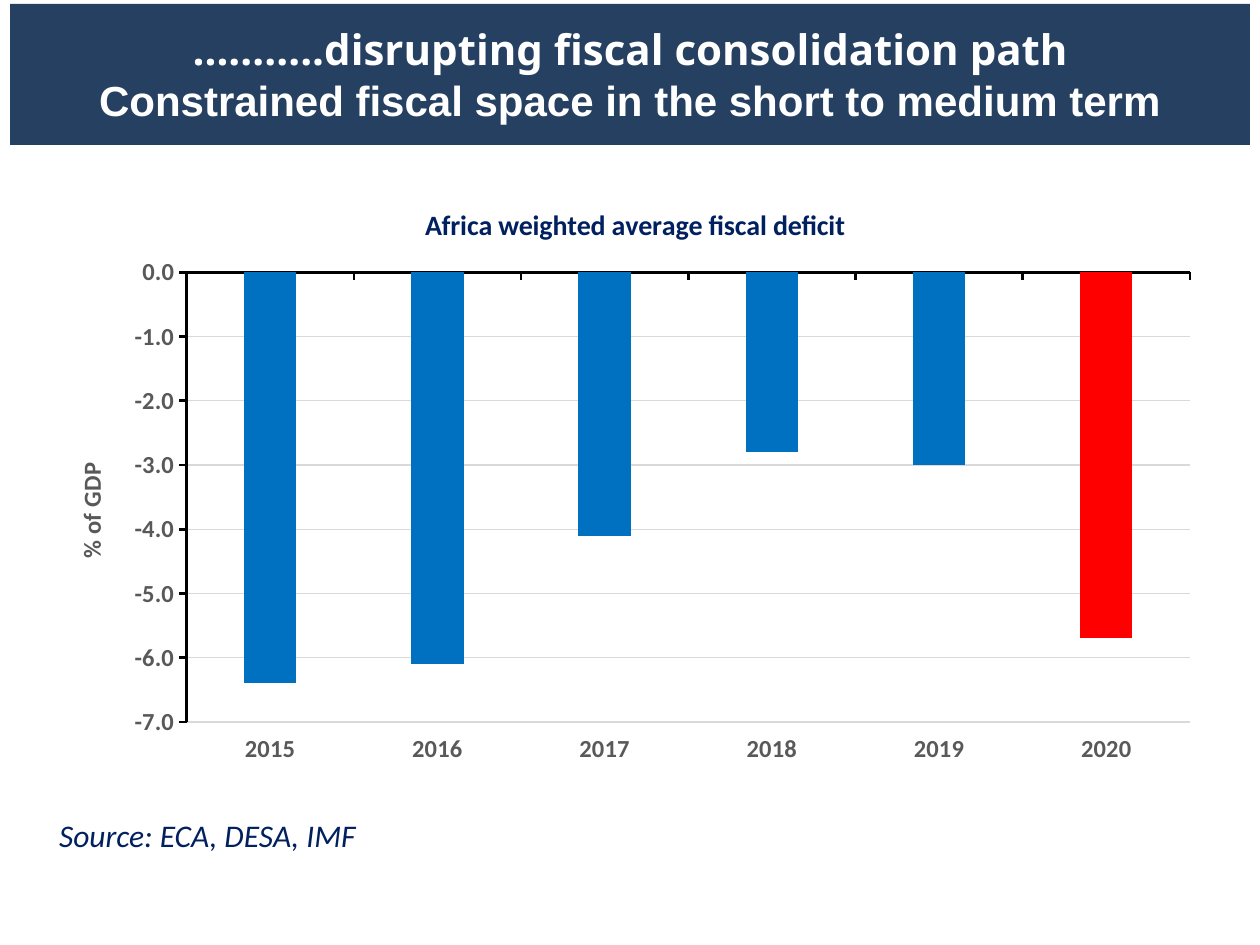
from lxml import etree
from pptx import Presentation
from pptx.chart.data import CategoryChartData
from pptx.dml.color import RGBColor
from pptx.enum.chart import XL_CHART_TYPE, XL_TICK_LABEL_POSITION, XL_TICK_MARK
from pptx.enum.text import MSO_ANCHOR, PP_ALIGN
from pptx.oxml.ns import qn
from pptx.util import Inches, Pt

COLUMN = XL_CHART_TYPE.COLUMN_CLUSTERED
LOW = XL_TICK_LABEL_POSITION.LOW
OUT, NO_TICK = XL_TICK_MARK.OUTSIDE, XL_TICK_MARK.NONE
MIDDLE, CENTER = MSO_ANCHOR.MIDDLE, PP_ALIGN.CENTER

COLORS = {"banner": "254061", "white": "FFFFFF", "navy": "002060",
          "black": "000000", "gray": "595959", "grid": "D9D9D9",
          "bar": "0070C0", "crisis": "FF0000"}
DEFICIT = {"2015": -6.4, "2016": -6.1, "2017": -4.1,
           "2018": -2.8, "2019": -3.0, "2020": -5.7}


def rgb(name):
    return RGBColor.from_string(COLORS[name])


def place(parent, index, **parts):
    """Give a chart part a manual layout, in fractions of the chart."""
    for old in parent.findall(qn("c:layout")):
        parent.remove(old)
    layout = etree.Element(qn("c:layout"))
    manual = etree.SubElement(layout, qn("c:manualLayout"))
    for tag, value in parts.items():
        etree.SubElement(manual, qn(f"c:{tag}")).set("val", str(value))
    parent.insert(index, layout)


class Deck:
    def __init__(self):
        self.prs = Presentation()
        self.prs.slide_width, self.prs.slide_height = Inches(10), Inches(7.5)
        self.slide = self.prs.slides.add_slide(self.prs.slide_layouts[5])

    def style(self, font, size, color, face="Calibri", bold=False, italic=False):
        font.name, font.size = face, Pt(size)
        font.bold, font.italic = bold, italic
        font.color.rgb = rgb(color)

    def banner(self, lines, x, y, w, h):
        """Turn the title placeholder into a filled, rounded banner."""
        title = self.slide.shapes.title
        title.left, title.top = Inches(x), Inches(y)
        title.width, title.height = Inches(w), Inches(h)
        shape = etree.SubElement(title._element.spPr, qn("a:prstGeom"))
        shape.set("prst", "roundRect")
        etree.SubElement(shape, qn("a:avLst"))
        title.fill.solid()
        title.fill.fore_color.rgb = rgb("banner")
        frame = title.text_frame
        frame.text = "\n".join(text for text, _ in lines)
        frame.word_wrap, frame.vertical_anchor = True, MIDDLE
        frame.margin_left = frame.margin_right = Inches(0.1)
        frame.margin_top = frame.margin_bottom = Inches(0.1)
        for para, (_, face) in zip(frame.paragraphs, lines):
            para.alignment = CENTER
            para.space_before = Pt(0)
            self.style(para.runs[0].font, 24, "white", face, bold=True)

    def note(self, text, x, y, w, h):
        box = self.slide.shapes.add_textbox(Inches(x), Inches(y), Inches(w), Inches(h))
        frame = box.text_frame
        frame.word_wrap = True
        frame.text = text
        self.style(frame.paragraphs[0].runs[0].font, 18, "navy", italic=True)

    def heading(self, title, text, size, color, x, y):
        title.text_frame.text = text
        self.style(title.text_frame.paragraphs[0].runs[0].font, size, color, bold=True)
        place(title._element, 1, xMode="edge", yMode="edge", x=x, y=y)

    def axis(self, axis):
        axis.major_tick_mark, axis.minor_tick_mark = OUT, NO_TICK
        axis.format.line.color.rgb = rgb("black")
        axis.format.line.width = Pt(1.5)
        self.style(axis.tick_labels.font, 14, "gray", bold=True)

    def chart(self, x, y, w, h):
        data = CategoryChartData(number_format="0.0")
        data.categories = list(DEFICIT)
        data.add_series("Series 1", list(DEFICIT.values()))
        chart = self.slide.shapes.add_chart(
            COLUMN, Inches(x), Inches(y), Inches(w), Inches(h), data).chart
        self.style(chart.font, 10, "black")
        chart.has_legend = False
        chart.has_title = True
        self.heading(chart.chart_title, "Africa weighted average fiscal deficit",
                     16, "navy", 0.32, 0.04)

        years, share = chart.category_axis, chart.value_axis
        for axis in (years, share):
            self.axis(axis)
        years.tick_label_position = LOW
        share.minimum_scale, share.maximum_scale, share.major_unit = -7, 0, 1
        share.tick_labels.number_format = "0.0"
        share.tick_labels.number_format_is_linked = False
        grid = share.major_gridlines.format.line
        grid.color.rgb, grid.width = rgb("grid"), Pt(0.75)
        share.has_title = True
        self.heading(share.axis_title, "% of GDP", 14, "gray", 0.02, 0.47)

        plot = chart.plots[0]
        plot.gap_width, plot.overlap = 219, -27
        plot.vary_by_categories = False
        bars = plot.series[0]
        bars.invert_if_negative = False
        last = bars.points[len(DEFICIT) - 1]
        for part, color in ((bars, "bar"), (last, "crisis")):
            part.format.fill.solid()
            part.format.fill.fore_color.rgb = rgb(color)
        area = chart._chartSpace.find(".//" + qn("c:plotArea"))
        place(area, 0, layoutTarget="inner", xMode="edge", yMode="edge",
              x=0.12, y=0.16, w=0.86, h=0.75)


def main():
    deck = Deck()
    deck.banner([("………..disrupting fiscal consolidation path", "Noto Sans"),
                 ("Constrained fiscal space in the short to medium term", "Arial")],
                0.08, 0.03, 9.84, 1.12)
    deck.note("Source: ECA, DESA, IMF", 0.37, 6.43, 4.02, 0.4)
    deck.chart(0.37, 1.4, 9.26, 4.76)
    deck.prs.save("out.pptx")


if __name__ == "__main__":
    main()
